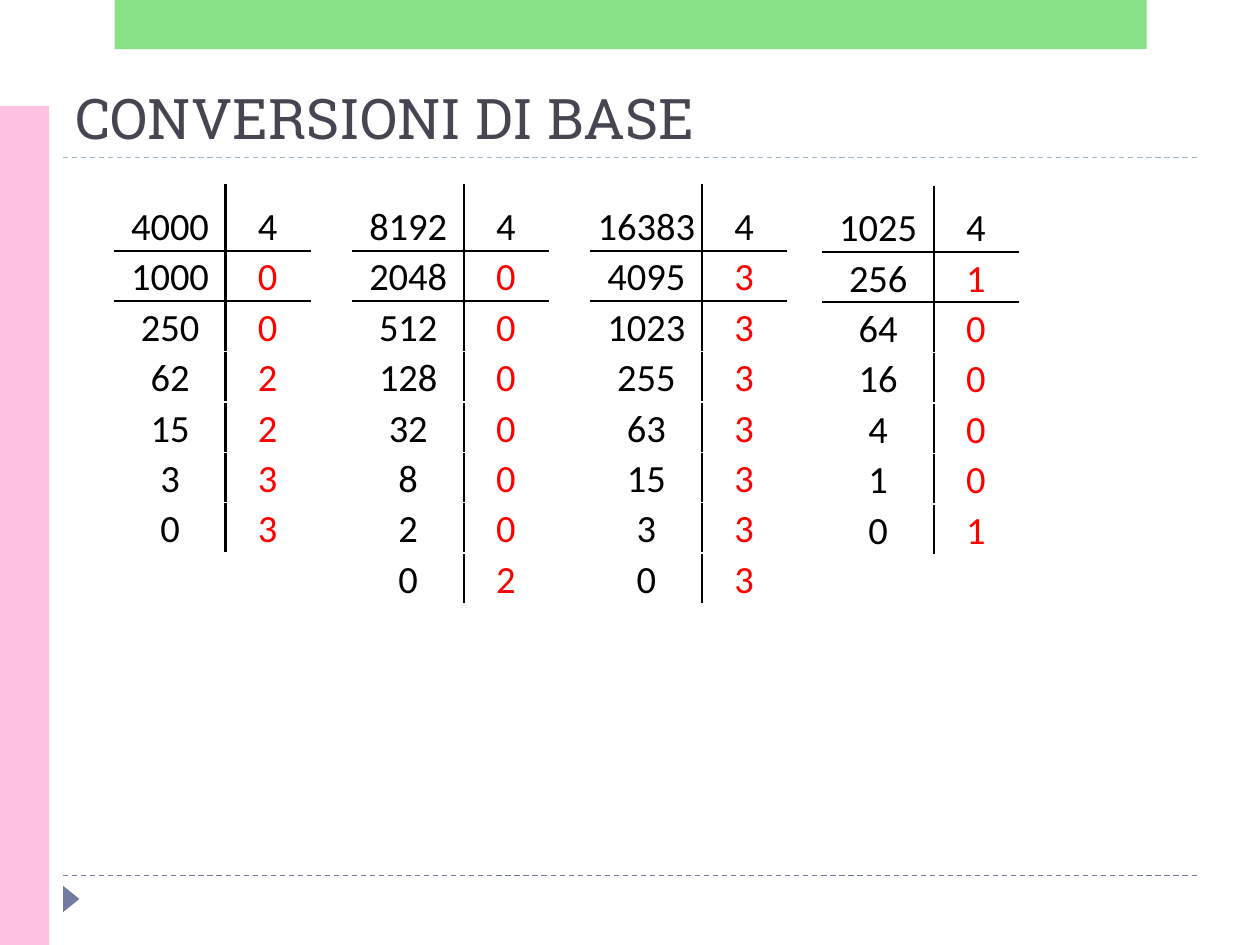
from lxml.etree import SubElement
from pptx import Presentation
from pptx.dml.color import RGBColor
from pptx.enum.dml import MSO_LINE
from pptx.enum.shapes import MSO_CONNECTOR, MSO_SHAPE
from pptx.enum.text import MSO_ANCHOR as Anchor, MSO_AUTO_SIZE, PP_ALIGN as Align
from pptx.oxml.ns import qn
from pptx.util import Inches, Pt

BLACK = RGBColor(0x00, 0x00, 0x00)
RED = RGBColor(0xFF, 0x00, 0x00)
SLATE = RGBColor(0x46, 0x46, 0x53)
INDIGO = RGBColor(0x72, 0x7C, 0xA3)
PALE_BLUE = RGBColor(0x9F, 0xB8, 0xCD)
PINK = RGBColor(0xFF, 0xC1, 0xE0)
GREEN = RGBColor(0x62, 0xD8, 0x62)

WIDTH, HEIGHT = 10, 7.5
MARGIN = WIDTH / 20
TITLE_BOTTOM = HEIGHT / 6
COLUMNS = (0.88, 0.67)
HEAD_ROW, BODY_ROW = 0.52, 0.4
BASE = 4
# Number to convert, left and top of its table
CONVERSIONS = [(4000, 0.91, 1.47), (8192, 2.8, 1.47),
               (16383, 4.69, 1.47), (1025, 6.53, 1.48)]


def add_rule(page, y, color):
    rule = page.shapes.add_connector(
        MSO_CONNECTOR.STRAIGHT, Inches(MARGIN), Inches(y),
        Inches(WIDTH - MARGIN), Inches(y))
    rule.line.color.rgb = color
    rule.line.width = Pt(0.75)
    rule.line.dash_style = MSO_LINE.DASH
    SubElement(rule._element.spPr, qn("a:effectLst"))


def add_block(page, kind, box, color, opacity=100):
    block = page.shapes.add_shape(kind, *map(Inches, box))
    block.shadow.inherit = False
    block.fill.solid()
    block.fill.fore_color.rgb = color
    block.line.fill.background()
    if opacity < 100:
        tint = block._element.spPr.find(".//" + qn("a:srgbClr"))
        SubElement(tint, qn("a:alpha"), val=str(opacity * 1000))
    return block


def set_title(page, text):
    title = page.shapes.title
    title.left, title.top = Inches(MARGIN), Inches(0.55)
    title.width, title.height = Inches(WIDTH - 2 * MARGIN), Inches(0.7)
    frame = title.text_frame
    frame.auto_size = MSO_AUTO_SIZE.NONE
    frame.vertical_anchor = Anchor.BOTTOM
    para = frame.paragraphs[0]
    para.alignment = Align.LEFT
    span = para.add_run()
    span.text = text
    span.font.name = "Roboto Slab"
    span.font.size = Pt(32)
    span.font.color.rgb = SLATE


def division_steps(number):
    """Rows of quotient and remainder, headed by the number and the base."""
    rows = [(number, BASE)]
    while number:
        number, remainder = divmod(number, BASE)
        rows.append((number, remainder))
    return rows


def add_borders(cell, sides):
    properties = cell._tc.get_or_add_tcPr()
    for side in sides:
        line = SubElement(properties, qn(f"a:ln{side}"), w=str(Pt(1.5)))
        fill = SubElement(line, qn("a:solidFill"))
        SubElement(fill, qn("a:srgbClr"), val=str(BLACK))


def fill_cell(cell, value, color, sides):
    add_borders(cell, sides)
    cell.fill.background()
    cell.vertical_anchor = Anchor.BOTTOM
    cell.margin_left = cell.margin_right = cell.margin_top = Inches(0.01)
    cell.margin_bottom = 0
    para = cell.text_frame.paragraphs[0]
    para.alignment = Align.CENTER
    span = para.add_run()
    span.text = str(value)
    span.font.name = "Calibri"
    span.font.size = Pt(22)
    span.font.color.rgb = color


def add_division(page, number, left, top):
    steps = division_steps(number)
    height = HEAD_ROW + BODY_ROW * (len(steps) - 1)
    table = page.shapes.add_table(
        len(steps), len(COLUMNS), Inches(left), Inches(top),
        Inches(sum(COLUMNS)), Inches(height)).table
    table.first_row = table.horz_banding = False
    for column, width in zip(table.columns, COLUMNS):
        column.width = Inches(width)
    for r, values in enumerate(steps):
        table.rows[r].height = Inches(BODY_ROW if r else HEAD_ROW)
        # The header row is underlined; a vertical line parts the columns
        edge = {0: "B", 1: "T"}.get(r, "")
        for c, value in enumerate(values):
            color = RED if r and c else BLACK
            fill_cell(table.cell(r, c), value, color, "RL"[c] + edge)


def main():
    deck = Presentation()
    deck.slide_width, deck.slide_height = Inches(WIDTH), Inches(HEIGHT)
    page = deck.slides.add_slide(deck.slide_layouts[5])

    # Frame of the page
    add_rule(page, 6.95, INDIGO)
    add_rule(page, TITLE_BOTTOM, PALE_BLUE)
    marker = add_block(page, MSO_SHAPE.ISOSCELES_TRIANGLE,
                       (0.46, 7.07, 0.21, 0.13), INDIGO)
    marker.rotation = 90
    add_block(page, MSO_SHAPE.RECTANGLE, (0, 0.84, 0.39, HEIGHT - 0.84), PINK)
    add_block(page, MSO_SHAPE.RECTANGLE, (0.91, 0, 8.19, 0.39), GREEN, opacity=76)

    # Title and the successive divisions
    set_title(page, "CONVERSIONI DI BASE")
    for number, left, top in CONVERSIONS:
        add_division(page, number, left, top)

    deck.save("out.pptx")


if __name__ == "__main__":
    main()
